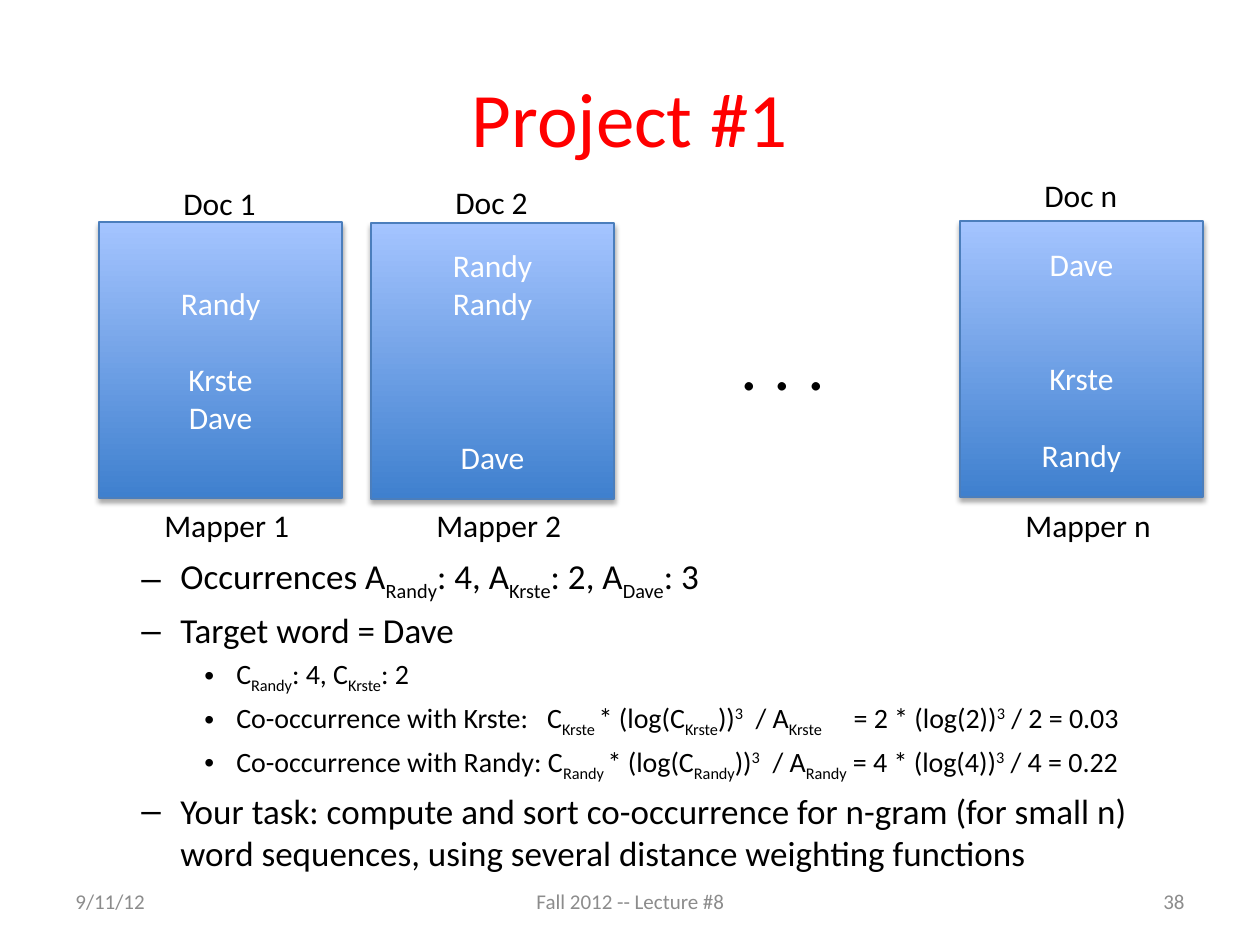
from dataclasses import dataclass

from lxml.etree import SubElement
from pptx import Presentation
from pptx.dml.color import RGBColor as Rgb
from pptx.enum.shapes import MSO_SHAPE as Shape
from pptx.enum.text import MSO_ANCHOR as Anchor, MSO_AUTO_SIZE as AutoSize, PP_ALIGN as Align
from pptx.oxml.ns import qn
from pptx.util import Emu, Pt

PX_PER_INCH = 126


def px(length):
    return Emu(round(length * 914400 / PX_PER_INCH))


@dataclass(frozen=True)
class Theme:
    font: str = "Calibri"
    title: str = "FF0000"
    ink: str = "000000"
    muted: str = "8C8C8C"
    card_text: str = "FFFFFF"
    card_bottom: str = "3F80CE"
    card_top: str = "A4C4FF"
    card_line: str = "4B7EBC"
    title_size: int = 44
    dots_size: int = 40
    point_size: int = 20
    detail_size: int = 16
    label_size: int = 18
    footer_size: int = 12
    card_leading: int = 22


class SlideBuilder:
    # Level: (bullet, left margin, hanging indent)
    LEVELS = {1: ("–", 102, 39), 2: ("•", 158, 32)}
    BASELINES = {"_": "-25000", "^": "30000"}

    def __init__(self, slide, theme):
        self.slide = slide
        self.theme = theme

    def style(self, run, size, color):
        run.font.name = self.theme.font
        run.font.size = Pt(size)
        run.font.color.rgb = Rgb.from_string(color)

    def text(self, box, words, size, color, align=Align.LEFT, anchor=Anchor.MIDDLE, wrap=True):
        frame = self.slide.shapes.add_textbox(*map(px, box)).text_frame
        frame.text = words
        frame.word_wrap = wrap
        frame.vertical_anchor = anchor
        if not wrap:
            frame.auto_size = AutoSize.SHAPE_TO_FIT_TEXT
        line = frame.paragraphs[0]
        line.alignment = align
        self.style(line.runs[0], size, color)

    def label(self, box, words, size):
        self.text(box, words, size, self.theme.ink, anchor=Anchor.TOP, wrap=False)

    def card(self, box, entries):
        """Each entry is a word and the number of empty lines above it."""
        theme = self.theme
        card = self.slide.shapes.add_shape(Shape.RECTANGLE, *map(px, box))
        card.fill.gradient()
        card.fill.gradient_angle = 90
        for stop, color in zip(card.fill.gradient_stops, (theme.card_bottom, theme.card_top)):
            stop.color.rgb = Rgb.from_string(color)
        card.line.color.rgb = Rgb.from_string(theme.card_line)
        card.line.width = Pt(0.75)
        self.soft_shadow(card)

        frame = card.text_frame
        frame.vertical_anchor = Anchor.MIDDLE
        frame.text = "\n".join(word for word, _ in entries)
        for line, (_, gap) in zip(frame.paragraphs, entries):
            line.alignment = Align.CENTER
            line.space_before = Pt(gap * theme.card_leading)
            self.style(line.runs[0], theme.label_size, theme.card_text)

    def soft_shadow(self, card):
        card.shadow.inherit = False
        effects = card._element.spPr.find(qn("a:effectLst"))
        shadow = SubElement(effects, qn("a:outerShdw"), blurRad=str(Pt(3.1)),
                            dist=str(Pt(1.8)), dir="5400000", rotWithShape="0")
        color = SubElement(shadow, qn("a:srgbClr"), val="000000")
        SubElement(color, qn("a:alpha"), val="35000")

    def bullets(self, box, points):
        frame = self.slide.shapes.add_textbox(*map(px, box)).text_frame
        frame.word_wrap = True
        for index, (level, pieces) in enumerate(points):
            line = frame.add_paragraph() if index else frame.paragraphs[0]
            size = self.theme.point_size if level == 1 else self.theme.detail_size
            line.level = level
            line.space_before = Pt(size * 0.2)
            self.bullet(line, level)
            for piece in pieces:
                self.piece(line.add_run(), piece, size)

    def bullet(self, line, level):
        mark, margin, hanging = self.LEVELS[level]
        props = line._p.get_or_add_pPr()
        props.set("marL", str(px(margin)))
        props.set("indent", str(-px(hanging)))
        SubElement(props, qn("a:buFont"), typeface="Arial")
        SubElement(props, qn("a:buChar"), char=mark)

    def piece(self, run, piece, size):
        """"_" marks a subscript, "^" a superscript; a number is a space widened by points."""
        self.style(run, size, self.theme.ink)
        props = run._r.get_or_add_rPr()
        if not isinstance(piece, str):
            run.text = " "
            props.set("spc", str(round(piece * 100)))
        elif piece[0] in self.BASELINES:
            run.text = piece[1:]
            props.set("baseline", self.BASELINES[piece[0]])
        else:
            run.text = piece


def co_occurrence(word, count, score, lead, tail):
    return (2, [f"Co-occurrence with {word}:", lead, "C", f"_{word} ", "* (log(C", f"_{word}",
                "))", "^3", 3.6, "/ A", f"_{word}", tail,
                f"= {count} * (log({count}))", "^3", f" / {count} = {score}"])


def main():
    theme = Theme()
    deck = Presentation()
    deck.slide_width, deck.slide_height = px(1260), px(945)
    page = SlideBuilder(deck.slides.add_slide(deck.slide_layouts[6]), theme)

    # Title
    page.text((63, 38, 1134, 158), "Project #1", theme.title_size, theme.title, Align.CENTER)

    # Occurrences and co-occurrence formulas
    page.bullets((66, 548, 1134, 373), [
        (1, ["Occurrences A", "_Randy", ": 4, A", "_Krste", ": 2, A", "_Dave", ": 3"]),
        (1, ["Target word = Dave"]),
        (2, ["C", "_Randy", ": 4, C", "_Krste", ": 2"]),
        co_occurrence("Krste", 2, "0.03", 7.2, 14.5),
        co_occurrence("Randy", 4, "0.22", 0, 0),
        (1, ["Your task: compute and sort co-occurrence for n-gram (for small n) "
             "word sequences, using several distance weighting functions"]),
    ])

    # Footer
    for left, width, words, align in (
        (63, 294, "9/11/12", Align.LEFT),
        (431, 399, "Fall 2012 -- Lecture #8", Align.CENTER),
        (903, 294, "38", Align.RIGHT),
    ):
        page.text((left, 876, width, 50), words, theme.footer_size, theme.muted, align)

    # Documents, each with its name above and its mapper below
    for name, left, top, name_top, entries in (
        ("1", 99, 222, 178, [("Randy", 0), ("Krste", 1), ("Dave", 0)]),
        ("2", 371, 223, 177, [("Randy", 0), ("Randy", 0), ("Dave", 3)]),
        ("n", 960, 221, 170, [("Dave", 0), ("Krste", 2), ("Randy", 1)]),
    ):
        page.card((left, top, 243, 276), entries)
        page.label((left + 72, name_top, 98, 50), f"Doc {name}", theme.label_size)
        page.label((left + 53, 500, 151, 50), f"Mapper {name}", theme.label_size)

    # Documents left out
    page.label((728, 314, 111, 97), ". . .", theme.dots_size)

    deck.save("out.pptx")


if __name__ == "__main__":
    main()
